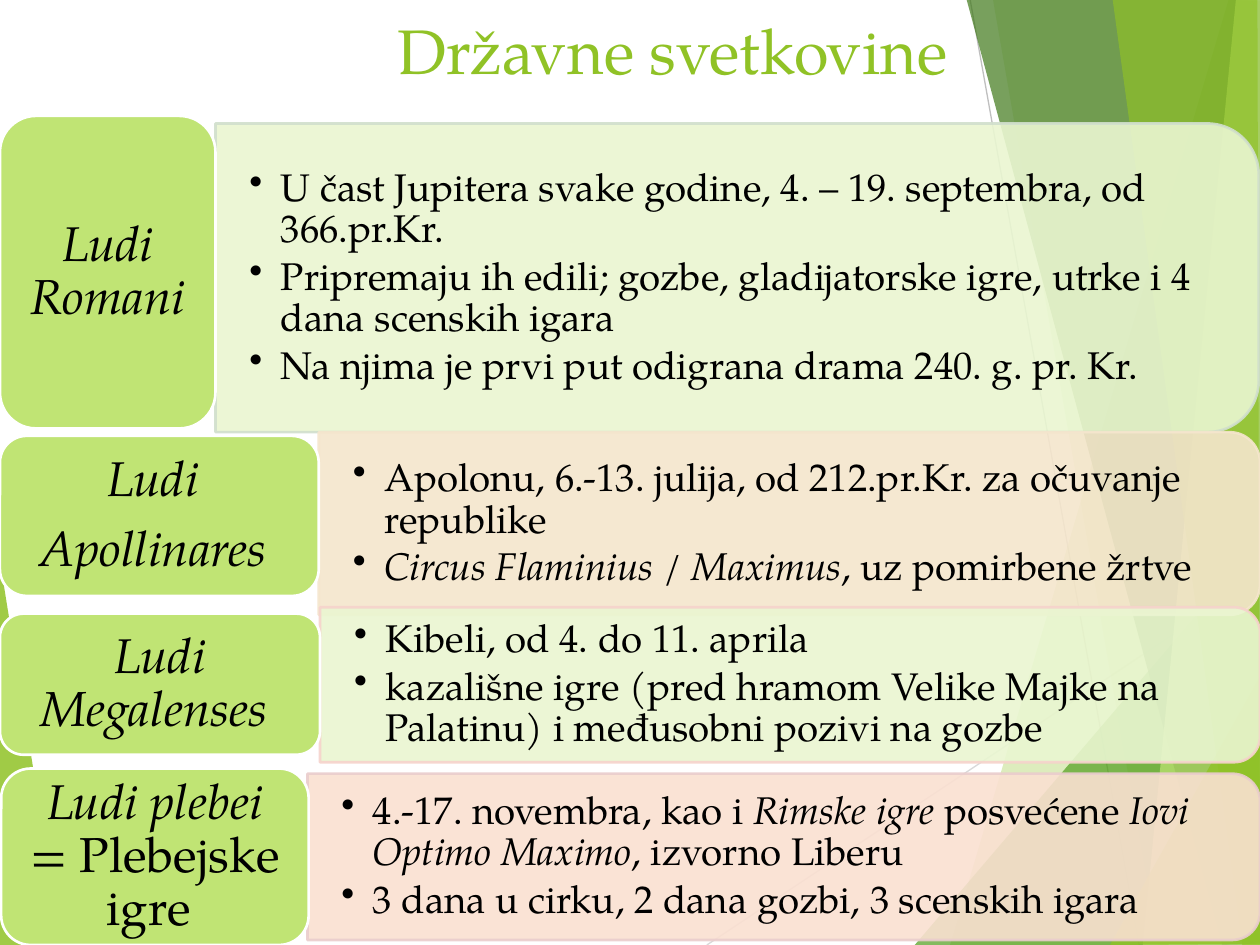
import pptx
import pptx.util
import pptx.dml.color
import pptx.enum.shapes
import pptx.enum.text
import pptx.oxml
import pptx.oxml.ns
import lxml.etree

Inches = pptx.util.Inches
Pt = pptx.util.Pt
Shape = pptx.enum.shapes.MSO_SHAPE
qn = pptx.oxml.ns.qn
FONT = "TeX Gyre Pagella"


def paint(form, color, alpha=100):
    """Give a fill, line or font a solid colour with opacity in percent."""
    if hasattr(form, "solid"):
        form.solid()
        target = form.fore_color
    else:
        target = form.color
    target.rgb = pptx.dml.color.RGBColor.from_string(color)
    if alpha < 100:
        for node in form._xPr.iter(qn("a:srgbClr")):
            if node.find(qn("a:alpha")) is None:
                lxml.etree.SubElement(node, qn("a:alpha"), val=str(alpha * 1000))


def write(box, lines, size, color, inset=(0.1, 0.05), after=0, bullet=False):
    """Add middle-anchored paragraphs; parts between underscores are italic."""
    left, top, width, height = box
    frame = shapes.add_textbox(Inches(left), Inches(top), Inches(width), Inches(height)).text_frame
    frame.word_wrap = True
    frame.vertical_anchor = pptx.enum.text.MSO_ANCHOR.MIDDLE
    frame.margin_left = frame.margin_right = Inches(inset[0])
    frame.margin_top = frame.margin_bottom = Inches(inset[1])
    for i, line in enumerate(lines):
        para = frame.add_paragraph() if i else frame.paragraphs[0]
        para.line_spacing = 0.9 if after else 1.0
        para.space_after = Pt(after)
        if bullet:
            para.level = 1
            props = para._p.get_or_add_pPr()
            props.set("marL", str(Inches(0.25)))
            props.set("indent", str(-Inches(0.25)))
            lxml.etree.SubElement(props, qn("a:buChar"), char="•")
        else:
            para.alignment = pptx.enum.text.PP_ALIGN.CENTER
        for k, part in enumerate(line.split("_")):
            if part:
                run = para.add_run()
                run.text = part
                run.font.size = Pt(size)
                run.font.name = FONT
                run.font.italic = k % 2 == 1
                paint(run.font.fill, color)


deck = pptx.Presentation()
deck.slide_width, deck.slide_height = Inches(10), Inches(7.5)
slide = deck.slides.add_slide(deck.slide_layouts[6])
shapes = slide.shapes

# Background facets: corner points, colour, opacity
facets = [
    ([(-0.01, 4.39), (0.49, 7.51), (-0.01, 7.5)], "90C226", 85),
    ([(9.75, 0), (7.54, 7.5), (10.02, 7.51), (10.01, 0.01)], "90C226", 30),
    ([(7.88, -0.01), (9.19, 7.5), (10.01, 7.5), (10.01, -0.01)], "90C226", 20),
    ([(7.26, 7.5), (10, 4.29), (10.01, 7.5)], "54A021", 72),
    ([(7.67, -0.01), (9.7, 7.5), (10.01, 7.49), (10.01, -0.01)], "3F7819", 70),
    ([(9.81, -0.01), (9.07, 7.5), (10.01, 7.5), (10, -0.01)], "C0E474", 70),
    ([(8.83, -0.01), (9.86, 7.5), (10, 7.5), (9.98, -0.01)], "90C226", 65),
    ([(8.81, 7.5), (10.01, 5.35), (10.01, 7.49)], "90C226", 80),
]
rays = [((5.61, 7.5), (10.01, 4.57), "D9D9D9"), ((7.7, 0), (9.04, 7.5), "BFBFBF")]

for n, (points, color, alpha) in enumerate(facets):
    spots = [(Inches(x), Inches(y)) for x, y in points]
    pen = shapes.build_freeform(*spots[0])
    pen.add_line_segments(spots[1:], close=True)
    facet = pen.convert_to_shape()
    facet.shadow.inherit = False
    facet.line.fill.background()
    paint(facet.fill, color, alpha)
    if n == 0:
        for (x1, y1), (x2, y2), tint in rays:
            ray = shapes.add_connector(pptx.enum.shapes.MSO_CONNECTOR.STRAIGHT,
                                       Inches(x1), Inches(y1), Inches(x2), Inches(y2))
            paint(ray.line.fill, tint)
            ray.line.width = Pt(0.75)
            lxml.etree.SubElement(ray._element.spPr, qn("a:effectLst"))

write((1.16, 0, 8.36, 0.78), ["Državne svetkovine"], 36, "90C226")

# Each row: panel box, fill, line, text box, points; label box, padding, lines
rows = [
    ((1.71, 0.98, 8.28, 2.45), "EAF6D1", "D1DFCD", (1.71, 1.1, 8.16, 2.21),
     ["U čast Jupitera svake godine, 4. – 19. septembra, od 366.pr.Kr.",
      "Pripremaju ih edili; gozbe, gladijatorske igre, utrke i 4 dana scenskih igara",
      "Na njima je prvi put odigrana drama 240. g. pr. Kr."],
     (0, 0.92, 1.71, 2.48), 0.08, ["_Ludi Romani _"]),
    ((2.53, 3.43, 7.47, 1.45), "F5E6CD", "F5E6CD", (2.53, 3.5, 7.4, 1.31),
     ["Apolonu, 6.-13. julija, od 212.pr.Kr. za očuvanje republike",
      "_Circus Flaminius_ / _Maximus_, uz pomirbene žrtve"],
     (0, 3.46, 2.53, 1.27), 0.06, ["_Ludi _", "_Apollinares _"]),
    ((2.54, 4.82, 7.46, 1.23), "EAF6D1", "F6D3CC", (2.54, 4.88, 7.4, 1.11),
     ["Kibeli, od 4. do 11. aprila",
      "kazališne igre (pred hramom Velike Majke na Palatinu) i međusobni pozivi na gozbe"],
     (0, 4.87, 2.54, 1.12), 0.05, ["_Ludi Megalenses _"]),
    ((2.44, 6.14, 7.56, 1.32), "FAE0D1", "EACDCD", (2.44, 6.2, 7.49, 1.19),
     ["4.-17. novembra, kao i _Rimske igre_ posvećene _Iovi Optimo Maximo_, izvorno Liberu",
      "3 dana u cirku, 2 dana gozbi, 3 scenskih igara"],
     (0.01, 6.1, 2.44, 1.4), 0.07, ["_Ludi plebei _= Plebejske igre "]),
]

for area, color, edge, inner, points, tag, pad, names in rows:
    # The panel is a top-rounded shape turned a quarter about its centre
    left, top, width, height = area
    shift = (width - height) / 2
    panel = shapes.add_shape(Shape.ROUND_2_SAME_RECTANGLE, Inches(left + shift),
                             Inches(top - shift), Inches(height), Inches(width))
    panel.rotation = 90
    label_at = [Inches(v) for v in tag]
    paint(panel.fill, color, 90)
    paint(panel.line.fill, edge, 90)
    write(inner, points, 22, "000000", (0.27, 0.14), 3.3, True)

    label = shapes.add_shape(Shape.ROUNDED_RECTANGLE, *label_at)
    paint(label.fill, "C0E474")
    paint(label.line.fill, "FFFFFF")
    for shape in (panel, label):
        shape.shadow.inherit = False
        shape.line.width = Pt(1.5)
    x, y, w, h = tag
    write((x + pad, y + pad, w - 2 * pad, h - 2 * pad), names, 28, "000000",
          (0.12, 0.06), 9.8)

deck.save("out.pptx")
